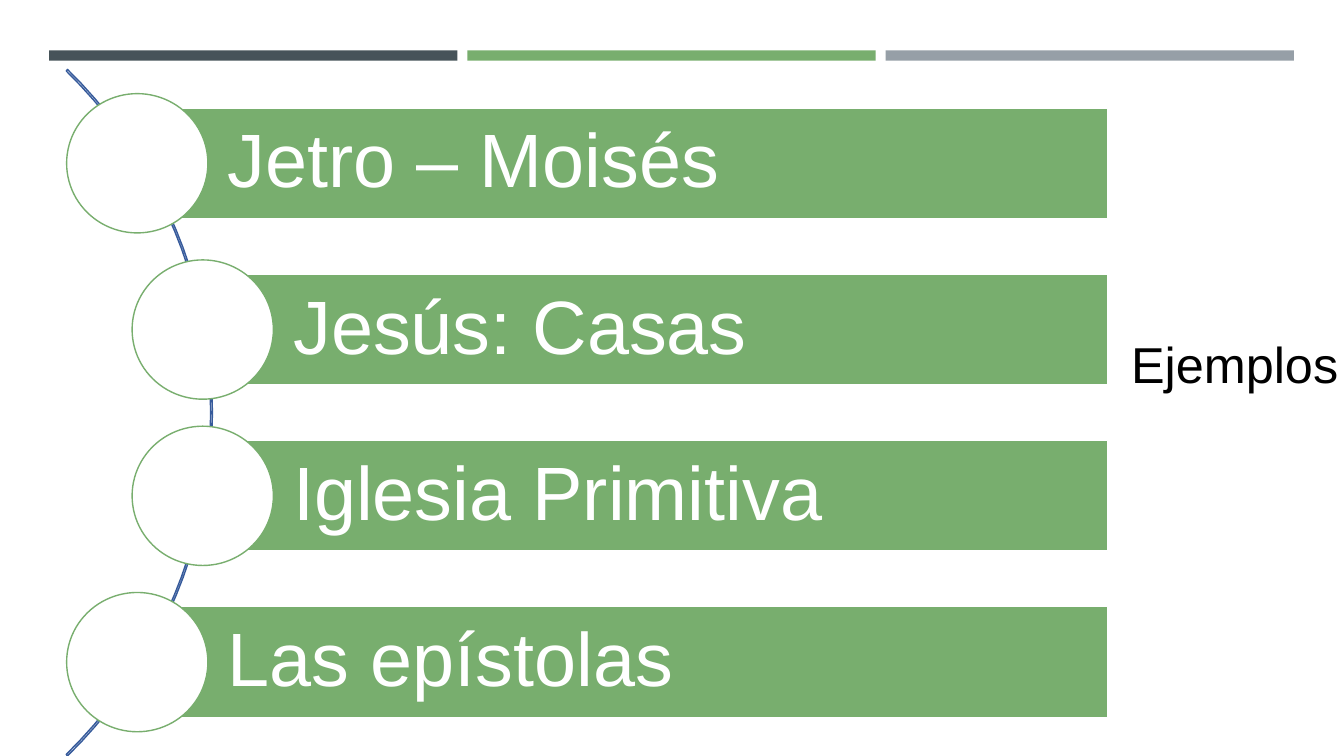
from dataclasses import dataclass

from pptx import Presentation
from pptx.dml.color import RGBColor
from pptx.enum.shapes import MSO_SHAPE
from pptx.enum.text import MSO_ANCHOR, PP_ALIGN
from pptx.util import Cm, Pt

RECTANGLE, OVAL = MSO_SHAPE.RECTANGLE, MSO_SHAPE.OVAL
MIDDLE, TOP = MSO_ANCHOR.MIDDLE, MSO_ANCHOR.TOP
LEFT, CENTER = PP_ALIGN.LEFT, PP_ALIGN.CENTER


@dataclass(frozen=True)
class Theme:
    font: str = "Arial"
    slate: str = "465359"
    green: str = "78AE6E"
    gray: str = "969FA7"
    blue: str = "365A9B"
    white: str = "FFFFFF"
    black: str = "000000"
    item_size: int = 54
    label_size: int = 36
    line_width: int = 1


THEME = Theme()
TOPICS = ["Jetro – Moisés", "Jesús: Casas", "Iglesia Primitiva", "Las epístolas"]


def style_shape(shape, fill=None, line=None):
    shape.shadow.inherit = False
    if fill:
        shape.fill.solid()
        shape.fill.fore_color.rgb = RGBColor.from_string(fill)
    else:
        shape.fill.background()
    if line:
        shape.line.color.rgb = RGBColor.from_string(line)
        shape.line.width = Pt(THEME.line_width)
    else:
        shape.line.fill.background()


def add_block(page, kind, box, fill, line=None):
    shape = page.shapes.add_shape(kind, *(Cm(length) for length in box))
    style_shape(shape, fill, line)
    return shape


def write_text(shape, text, size, color, align, anchor, inset, left_inset):
    frame = shape.text_frame
    frame.text = text
    frame.vertical_anchor = anchor
    frame.margin_top = frame.margin_right = frame.margin_bottom = Cm(inset)
    frame.margin_left = Cm(left_inset)
    para = frame.paragraphs[0]
    para.alignment = align
    font = para.runs[0].font
    font.name = THEME.font
    font.size = Pt(size)
    font.color.rgb = RGBColor.from_string(color)
    return para


# Three colour strips across the top
def add_header(page, box):
    left, top, width, height = box
    gap = 0.25
    colors = [THEME.slate, THEME.green, THEME.gray]
    strip = (width - gap * (len(colors) - 1)) / len(colors)
    for index, color in enumerate(colors):
        add_block(page, RECTANGLE, (left + index * (strip + gap), top, strip, height), color)


def curve_points(start, control_1, control_2, end, steps=40):
    for step in range(steps + 1):
        t = step / steps
        weights = ((1 - t) ** 3, 3 * t * (1 - t) ** 2, 3 * t ** 2 * (1 - t), t ** 3)
        yield tuple(
            Cm(sum(weight * value for weight, value in zip(weights, values)))
            for values in zip(start, control_1, control_2, end)
        )


# Thin curved band that links the circles
def add_arc(page, box):
    left, top, width, height = box
    right, bottom = left + width, top + height
    bend = 4.78
    outer = curve_points((left + 0.03, top), (right, top + bend),
                         (right, bottom - bend), (left + 0.03, bottom))
    inner = curve_points((left, bottom - 0.04), (right - 0.05, bottom - bend - 0.02),
                         (right - 0.05, top + bend + 0.02), (left, top + 0.04))
    points = [*outer, *inner]
    builder = page.shapes.build_freeform(*points[0], scale=1.0)
    builder.add_line_segments(points[1:], close=True)
    style_shape(builder.convert_to_shape(), line=THEME.blue)


# Bars with a circle at the left, the middle ones moved in along the arc
def add_topics(page, box):
    left, top, width, height = box
    circle_width, circle_height, bar_height = 3.56, 3.51, 2.79
    pitch = (height - circle_height) / (len(TOPICS) - 1)
    for index, topic in enumerate(TOPICS):
        indent = 0 if index in (0, len(TOPICS) - 1) else 1.65
        circle_left, row_top = left + indent, top + index * pitch
        bar_left = circle_left + circle_width / 2
        bar_top = row_top + (circle_height - bar_height) / 2
        bar = add_block(page, RECTANGLE,
                        (bar_left, bar_top, left + width - bar_left, bar_height),
                        THEME.green, THEME.white)
        para = write_text(bar, topic, THEME.item_size, THEME.white, LEFT, MIDDLE, 0.38, 2.28)
        para.line_spacing = 0.9
        para.space_before = Pt(22)
        add_block(page, OVAL, (circle_left, row_top, circle_width, circle_height),
                  THEME.white, THEME.green)


# Label at the right
def add_label(page, box):
    label = page.shapes.add_textbox(*(Cm(length) for length in box))
    write_text(label, "Ejemplos", THEME.label_size, THEME.black, CENTER, TOP, 0.13, 0.13)
    label.text_frame.word_wrap = False


def main():
    deck = Presentation()
    deck.slide_width, deck.slide_height = Cm(33.87), Cm(19.05)
    page = deck.slides.add_slide(deck.slide_layouts[6])
    add_header(page, (1.24, 1.27, 31.37, 0.26))
    add_arc(page, (1.67, 1.75, 4.9, 17.3))
    add_topics(page, (1.68, 2.36, 26.23, 16.08))
    add_label(page, (28.37, 8.26, 5.49, 1.8))
    deck.save("out.pptx")


if __name__ == "__main__":
    main()
